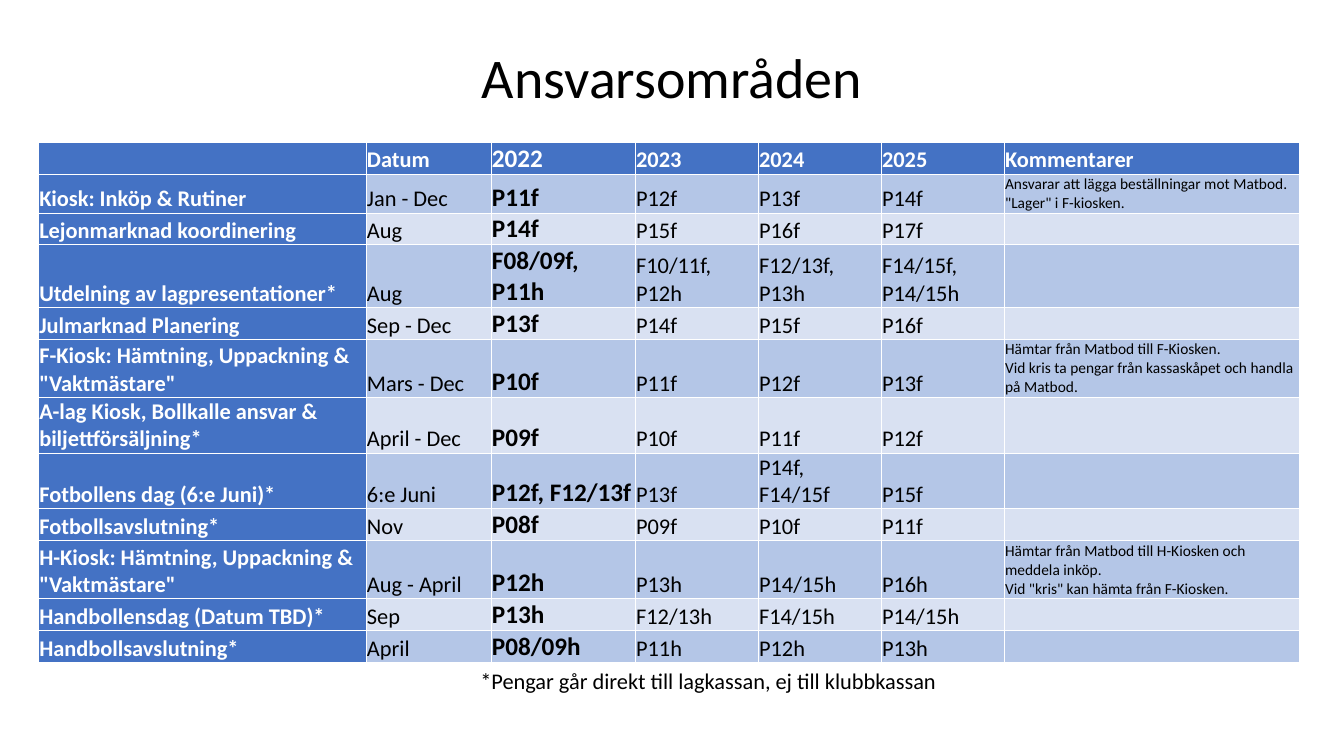
from dataclasses import dataclass

from lxml.etree import SubElement
from pptx import Presentation
from pptx.dml.color import RGBColor
from pptx.enum.text import MSO_ANCHOR, PP_ALIGN
from pptx.oxml.ns import qn
from pptx.util import Inches, Pt

WHITE = RGBColor(0xFF, 0xFF, 0xFF)
BLACK = RGBColor(0x00, 0x00, 0x00)
BLUE = RGBColor(0x44, 0x72, 0xC4)
DARK_BAND = RGBColor(0xB4, 0xC6, 0xE7)
LIGHT_BAND = RGBColor(0xD9, 0xE1, 0xF2)
FONT = "Calibri"
COLUMN_WIDTHS = (3.25, 1.24, 1.43, 1.22, 1.22, 1.22, 2.93)
CURRENT_YEAR_COLUMN, COMMENT_COLUMN = 2, 6


@dataclass(frozen=True)
class Duty:
    height: float
    name: str
    date: str
    teams: tuple[str, str, str, str]
    comment: str = ""

    def texts(self) -> tuple[str, ...]:
        return (self.name, self.date, *self.teams, self.comment)


@dataclass(frozen=True)
class Caption:
    text: str
    left: float
    top: float
    height: float
    size: int
    space_before: int = 0


DUTIES = (
    Duty(0.28, "", "Datum", ("2022", "2023", "2024", "2025"), "Kommentarer"),
    Duty(0.36, "Kiosk: Inköp & Rutiner", "Jan - Dec", ("P11f", "P12f", "P13f", "P14f"),
         'Ansvarar att lägga beställningar mot Matbod. "Lager" i F-kiosken.'),
    Duty(0.28, "Lejonmarknad koordinering", "Aug", ("P14f", "P15f", "P16f", "P17f")),
    Duty(0.45, "Utdelning av lagpresentationer*", "Aug",
         ("F08/09f, P11h", "F10/11f, P12h", "F12/13f, P13h", "F14/15f, P14/15h")),
    Duty(0.28, "Julmarknad Planering", "Sep - Dec", ("P13f", "P14f", "P15f", "P16f")),
    Duty(0.53, 'F-Kiosk: Hämtning, Uppackning & "Vaktmästare"', "Mars - Dec",
         ("P10f", "P11f", "P12f", "P13f"),
         "Hämtar från Matbod till F-Kiosken.\n"
         "Vid kris ta pengar från kassaskåpet och handla på Matbod."),
    Duty(0.45, "A-lag Kiosk, Bollkalle ansvar & biljettförsäljning*", "April - Dec",
         ("P09f", "P10f", "P11f", "P12f")),
    Duty(0.28, "Fotbollens dag (6:e Juni)*", "6:e Juni",
         ("P12f, F12/13f", "P13f", "P14f, F14/15f", "P15f")),
    Duty(0.28, "Fotbollsavslutning*", "Nov", ("P08f", "P09f", "P10f", "P11f")),
    Duty(0.53, 'H-Kiosk: Hämtning, Uppackning & "Vaktmästare"', "Aug - April",
         ("P12h", "P13h", "P14/15h", "P16h"),
         "Hämtar från Matbod till H-Kiosken och meddela inköp.\n"
         'Vid "kris" kan hämta från F-Kiosken.'),
    Duty(0.28, "Handbollensdag (Datum TBD)*", "Sep",
         ("P13h", "F12/13h", "F14/15h", "P14/15h")),
    Duty(0.28, "Handbollsavslutning*", "April", ("P08/09h", "P11h", "P12h", "P13h")),
)
CAPTIONS = (
    Caption("Ansvarsområden", 1.1, 0.19, 1.22, 40),
    Caption("*Pengar går direkt till lagkassan, ej till klubbkassan",
            1.46, 6.35, 0.84, 16, 10),
)


def apply_format(target, values: dict) -> None:
    for name, value in values.items():
        setattr(target, name, value)


def write_text(paragraph, text: str, size: int, color: RGBColor, bold: bool) -> None:
    paragraph.text = text
    for run in paragraph.runs:
        apply_format(run.font, {"name": FONT, "size": Pt(size), "bold": bold})
        run.font.color.rgb = color
    if not text:
        # An empty cell's row height follows its end-of-paragraph size
        SubElement(paragraph._p, qn("a:endParaRPr"), sz=str(size * 100))


def add_borders(cell) -> None:
    properties = cell._tc.get_or_add_tcPr()
    for side in ("lnL", "lnR", "lnT", "lnB"):
        line = SubElement(properties, qn(f"a:{side}"), w=str(Pt(0.5)))
        fill = SubElement(line, qn("a:solidFill"))
        SubElement(fill, qn("a:srgbClr"), val=str(WHITE))


def fill_cell(cell, text: str, row: int, column: int) -> None:
    heading = row == 0 or column == 0
    current_year = column == CURRENT_YEAR_COLUMN
    if current_year:
        size = 18
    elif row and (column == COMMENT_COLUMN or not text):
        size = 11
    else:
        size = 16
    apply_format(cell, {
        "vertical_anchor": MSO_ANCHOR.BOTTOM,
        "margin_left": Inches(0.01), "margin_right": Inches(0.01),
        "margin_top": Inches(0.01), "margin_bottom": Inches(0),
    })
    add_borders(cell)
    cell.fill.solid()
    band = DARK_BAND if row % 2 else LIGHT_BAND
    cell.fill.fore_color.rgb = BLUE if heading else band
    write_text(cell.text_frame.paragraphs[0], text, size,
               WHITE if heading else BLACK, heading or current_year)


def add_duty_table(slide) -> None:
    table = slide.shapes.add_table(
        len(DUTIES), len(COLUMN_WIDTHS), Inches(0.38), Inches(1.41),
        Inches(sum(COLUMN_WIDTHS)), Inches(sum(duty.height for duty in DUTIES))).table
    table.horz_banding = False
    for column, width in zip(table.columns, COLUMN_WIDTHS):
        column.width = Inches(width)
    for row, duty in enumerate(DUTIES):
        table.rows[row].height = Inches(duty.height)
        for column, text in enumerate(duty.texts()):
            fill_cell(table.cell(row, column), text, row, column)


def add_caption(slide, caption: Caption) -> None:
    shape = slide.shapes.add_textbox(Inches(caption.left), Inches(caption.top),
                                     Inches(11.13), Inches(caption.height))
    apply_format(shape.text_frame,
                 {"word_wrap": True, "vertical_anchor": MSO_ANCHOR.MIDDLE})
    paragraph = shape.text_frame.paragraphs[0]
    apply_format(paragraph, {"alignment": PP_ALIGN.CENTER, "line_spacing": 0.9,
                             "space_before": Pt(caption.space_before)})
    write_text(paragraph, caption.text, caption.size, BLACK, False)


def main() -> None:
    presentation = Presentation()
    apply_format(presentation, {"slide_width": Inches(13.33),
                                "slide_height": Inches(7.5)})
    slide = presentation.slides.add_slide(presentation.slide_layouts[6])
    # Duties by year
    add_duty_table(slide)
    # Title and footnote
    for caption in CAPTIONS:
        add_caption(slide, caption)
    presentation.save("out.pptx")


if __name__ == "__main__":
    main()
